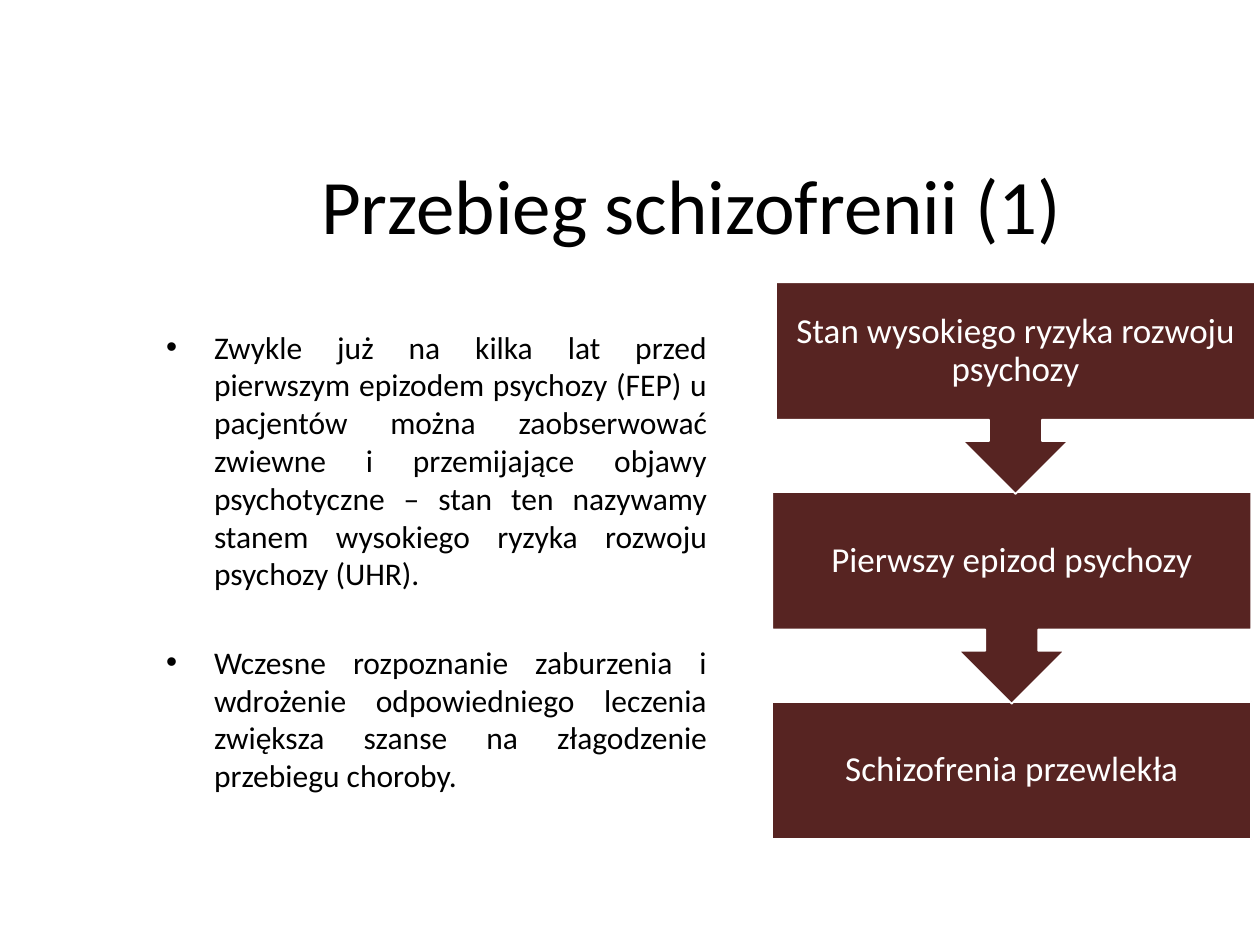
from pptx import Presentation
from pptx.dml.color import RGBColor
from pptx.enum import shapes, text
from pptx.oxml import parse_xml
from pptx.oxml.ns import nsdecls
from pptx.util import Inches, Pt

BLACK = RGBColor(0x00, 0x00, 0x00)
WHITE = RGBColor(0xFF, 0xFF, 0xFF)
MAROON = RGBColor(0x57, 0x24, 0x22)

TITLE = "Przebieg schizofrenii (1)"
POINTS = [
    "Zwykle już na kilka lat przed pierwszym epizodem psychozy (FEP) u pacjentów "
    "można zaobserwować zwiewne i przemijające objawy psychotyczne – stan ten "
    "nazywamy stanem wysokiego ryzyka rozwoju psychozy (UHR).",
    "Wczesne rozpoznanie zaburzenia i wdrożenie odpowiedniego leczenia zwiększa "
    "szanse na złagodzenie przebiegu choroby.",
]
STAGES = [
    "Stan wysokiego ryzyka rozwoju psychozy",
    "Pierwszy epizod psychozy",
    "Schizofrenia przewlekła",
]
STAGE_HEIGHT = Inches(1.09)
CALLOUT_HEIGHT = Inches(1.68)
FIRST_STAGE_SHIFT = Inches(0.03)


def style(paragraph, size, color, align):
    paragraph.alignment = align
    for run in paragraph.runs:
        run.font.name = "Calibri"
        run.font.size = Pt(size)
        run.font.color.rgb = color


def add_title(slide, left, top, width, height):
    frame = slide.shapes.add_textbox(left, top, width, height).text_frame
    frame.word_wrap = True
    frame.vertical_anchor = text.MSO_ANCHOR.MIDDLE
    frame.text = TITLE
    style(frame.paragraphs[0], 44, BLACK, text.PP_ALIGN.CENTER)


def add_bullet(paragraph):
    properties = paragraph._p.get_or_add_pPr()
    properties.set("marL", str(Inches(0.38)))
    properties.set("indent", str(-Inches(0.38)))
    properties.append(parse_xml(f'<a:buFont {nsdecls("a")} typeface="Arial"/>'))
    properties.append(parse_xml(f'<a:buChar {nsdecls("a")} char="•"/>'))


def add_points(slide, left, top, width, height):
    frame = slide.shapes.add_textbox(left, top, width, height).text_frame
    frame.word_wrap = True
    frame.text = "\n".join(POINTS)
    for index, point in enumerate(frame.paragraphs):
        add_bullet(point)
        style(point, 18, BLACK, text.PP_ALIGN.JUSTIFY)
        if index:
            point.space_before = Pt(29)


def add_stage(slide, kind, label, left, top, width, height):
    stage = slide.shapes.add_shape(kind, left, top, width, height)
    stage.shadow.inherit = False
    stage.fill.solid()
    stage.fill.fore_color.rgb = MAROON
    stage.line.color.rgb = WHITE
    stage.line.width = Pt(1)
    frame = stage.text_frame
    frame.word_wrap = True
    frame.vertical_anchor = text.MSO_ANCHOR.MIDDLE
    frame.margin_left = frame.margin_right = Inches(0.14)
    frame.margin_top = frame.margin_bottom = Inches(0.16)
    frame.text = label
    frame.paragraphs[0].line_spacing = 0.9
    style(frame.paragraphs[0], 20, WHITE, text.PP_ALIGN.CENTER)


def add_stages(slide, left, top, width, height):
    last = len(STAGES) - 1
    pitch = (height - STAGE_HEIGHT) // last
    for index in range(last, -1, -1):
        if index == last:
            kind, stage_height = shapes.MSO_SHAPE.RECTANGLE, STAGE_HEIGHT
        else:
            kind, stage_height = shapes.MSO_SHAPE.DOWN_ARROW_CALLOUT, CALLOUT_HEIGHT
        shift = 0 if index else FIRST_STAGE_SHIFT
        add_stage(slide, kind, STAGES[index], left + shift, top + index * pitch,
                  width, stage_height)


def main():
    deck = Presentation()
    deck.slide_width = Inches(10)
    deck.slide_height = Inches(7.5)
    slide = deck.slides.add_slide(deck.slide_layouts[6])
    add_title(slide, Inches(0.99), Inches(0.99), Inches(9), Inches(1.25))
    add_points(slide, Inches(1.22), Inches(2.55), Inches(4.49), Inches(4.95))
    add_stages(slide, Inches(6.13), Inches(2.24), Inches(3.8), Inches(4.42))
    deck.save("out.pptx")


if __name__ == "__main__":
    main()
